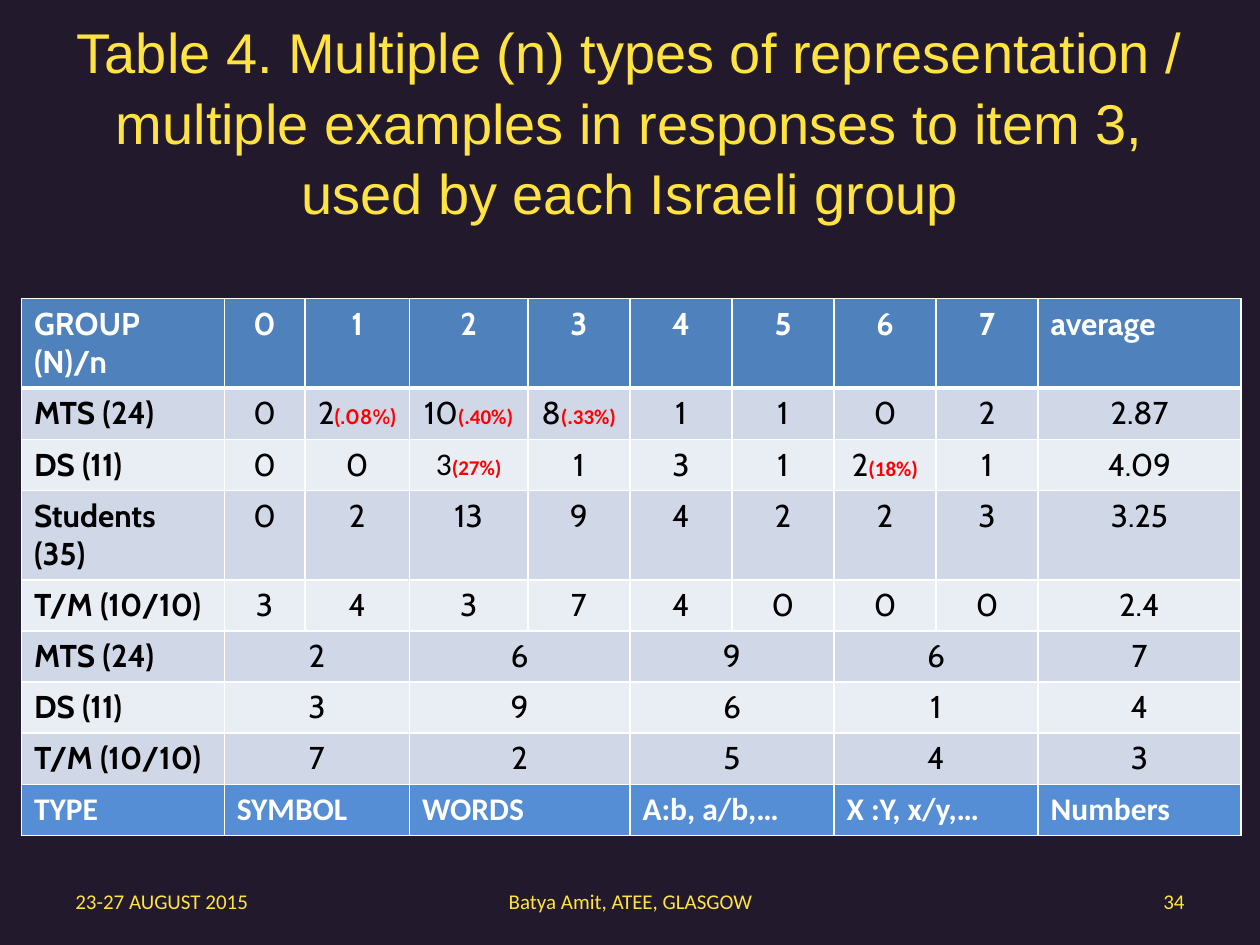
"""Build the slide with the table of representation types by group."""
from dataclasses import dataclass

from lxml import etree
from pptx import Presentation
from pptx.dml.color import RGBColor
from pptx.enum.text import MSO_ANCHOR, PP_ALIGN
from pptx.oxml.ns import qn
from pptx.util import Inches, Pt

LEFT, CENTER, RIGHT = PP_ALIGN.LEFT, PP_ALIGN.CENTER, PP_ALIGN.RIGHT
MIDDLE = MSO_ANCHOR.MIDDLE
COLORS = {
    "background": "221A2C", "yellow": "FFE341", "header": "4F81BD", "odd": "D0D8E8",
    "even": "E9EDF4", "types": "558ED5", "white": "FFFFFF", "black": "000000", "red": "FF0000",
}
COLUMN_WIDTHS = (1.61, 0.64, 0.83, 0.94, 0.81, 0.81, 0.81, 0.81, 0.81, 1.61)
PAIRED_COLUMNS = (0, 1, 3, 5, 7, 9)
CELL_FONTS = {(1, 2): ("Cabin", "Cabin"), (2, 3): ("Calibri", "Calibri")}


@dataclass
class Row:
    """One table row, with paired columns when it has six values."""
    fill: str
    values: tuple[str, ...]


@dataclass
class Footer:
    """One line of text at the foot of the page."""
    left: float
    width: float
    text: str
    align: PP_ALIGN


ROWS = (
    Row("header", ("GROUP (N)/n", "0", "1", "2", "3", "4", "5", "6", "7", "average")),
    Row("odd", ("MTS (24)", "0", "2(.08%)", "10(.40%)", "8(.33%)", "1", "1", "0", "2", "2.87")),
    Row("even", ("DS (11)", "0", "0", "3(27%)", "1", "3", "1", "2(18%)", "1", "4.09")),
    Row("odd", ("Students (35)", "0", "2", "13", "9", "4", "2", "2", "3", "3.25")),
    Row("even", ("T/M (10/10)", "3", "4", "3", "7", "4", "0", "0", "0", "2.4")),
    Row("odd", ("MTS (24)", "2", "6", "9", "6", "7")),
    Row("even", ("DS (11)", "3", "9", "6", "1", "4")),
    Row("odd", ("T/M (10/10)", "7", "2", "5", "4", "3")),
    Row("types", ("TYPE", "SYMBOL", "WORDS", "A:b, a/b,…", "X :Y, x/y,…", "Numbers")),
)
FOOTERS = (
    Footer(0.5, 2.33, "23-27 AUGUST 2015", LEFT),
    Footer(3.42, 3.17, "Batya Amit, ATEE, GLASGOW", CENTER),
    Footer(7.17, 2.33, "34", RIGHT),
)


def rgb(name: str) -> RGBColor:
    """Return a named colour."""
    return RGBColor.from_string(COLORS[name])


def add_span(para, text: str, color: str, formats: dict) -> None:
    """Add a run with the given font values."""
    span = para.add_run()
    span.text = text
    span.font.color.rgb = rgb(color)
    for key, value in formats.items():
        setattr(span.font, key, value)


def add_border(cell, side: str, points: float) -> None:
    """Draw a white line on one side of a cell."""
    properties = cell._tc.get_or_add_tcPr()
    line = etree.SubElement(properties, qn(f"a:ln{side}"), w=str(Pt(points)))
    fill = etree.SubElement(line, qn("a:solidFill"))
    etree.SubElement(fill, qn("a:srgbClr"), val=COLORS["white"])


def style_cell(cell, fill: str) -> None:
    """Give a cell its borders and fill."""
    for side in "LRTB":
        add_border(cell, side, 3 if fill == "header" and side == "B" else 1)
    cell.fill.solid()
    cell.fill.fore_color.rgb = rgb(fill)


def write_cell(cell, row: Row, place: tuple[int, int], text: str) -> None:
    """Write a value and its small red share, if any."""
    is_label = place[1] == 0 or row.fill == "types" or text == "average"
    is_band = row.fill in ("header", "types")
    number_font, share_font = CELL_FONTS.get(place, ("Cabin", "Calibri"))
    if row.fill == "types":
        number_font = "Calibri"
    split = text.find("(") if not is_label and "(" in text else len(text)
    para = cell.text_frame.paragraphs[0]
    para.alignment = LEFT if is_label else CENTER
    add_span(para, text[:split], "white" if is_band else "black",
             {"name": number_font, "size": Pt(18), "bold": is_label or is_band})
    if text[split:]:
        add_span(para, text[split:], "red", {"name": share_font, "size": Pt(12), "bold": True})


def add_groups_table(page) -> None:
    """Add the table of groups."""
    table = page.shapes.add_table(len(ROWS), len(COLUMN_WIDTHS), Inches(0.17), Inches(2.37),
                                  Inches(9.67), Inches(3.65)).table
    for column, width in zip(table.columns, COLUMN_WIDTHS):
        column.width = Inches(width)
    for row_index, row in enumerate(ROWS):
        for column_index in range(len(COLUMN_WIDTHS)):
            style_cell(table.cell(row_index, column_index), row.fill)
        is_paired = len(row.values) == len(PAIRED_COLUMNS)
        starts = PAIRED_COLUMNS if is_paired else range(len(COLUMN_WIDTHS))
        for start, text in zip(starts, row.values):
            cell = table.cell(row_index, start)
            if is_paired and start in PAIRED_COLUMNS[1:-1]:
                cell.merge(table.cell(row_index, start + 1))
            write_cell(cell, row, (row_index, start), text)


def add_title(page) -> None:
    """Fill and place the title."""
    title = page.shapes.title
    placement = {"left": 0.5, "top": 0.58, "width": 9, "height": 1.25}
    for key, value in placement.items():
        setattr(title, key, Inches(value))
    frame = title.text_frame
    frame.word_wrap = True
    frame.vertical_anchor = MIDDLE
    frame.margin_bottom = Inches(0.55)
    para = frame.paragraphs[0]
    para.alignment = CENTER
    para.line_spacing = 1.05
    add_span(para, "Table 4. Multiple (n) types of representation / multiple examples in "
             "responses to item 3, used by each Israeli group", "yellow",
             {"name": "Arial", "size": Pt(32)})


def add_footer(page, footer: Footer) -> None:
    """Add one footer text."""
    box = page.shapes.add_textbox(Inches(footer.left), Inches(6.95),
                                  Inches(footer.width), Inches(0.4))
    box.text_frame.word_wrap = True
    box.text_frame.vertical_anchor = MIDDLE
    para = box.text_frame.paragraphs[0]
    para.alignment = footer.align
    add_span(para, footer.text, "yellow", {"name": "Calibri", "size": Pt(12)})


def main() -> None:
    """Build and save the deck."""
    deck = Presentation()
    deck.slide_width, deck.slide_height = Inches(10), Inches(7.5)
    page = deck.slides.add_slide(deck.slide_layouts[5])
    page.background.fill.solid()
    page.background.fill.fore_color.rgb = rgb("background")
    add_title(page)
    add_groups_table(page)
    for footer in FOOTERS:
        add_footer(page, footer)
    deck.save("out.pptx")


if __name__ == "__main__":
    main()
